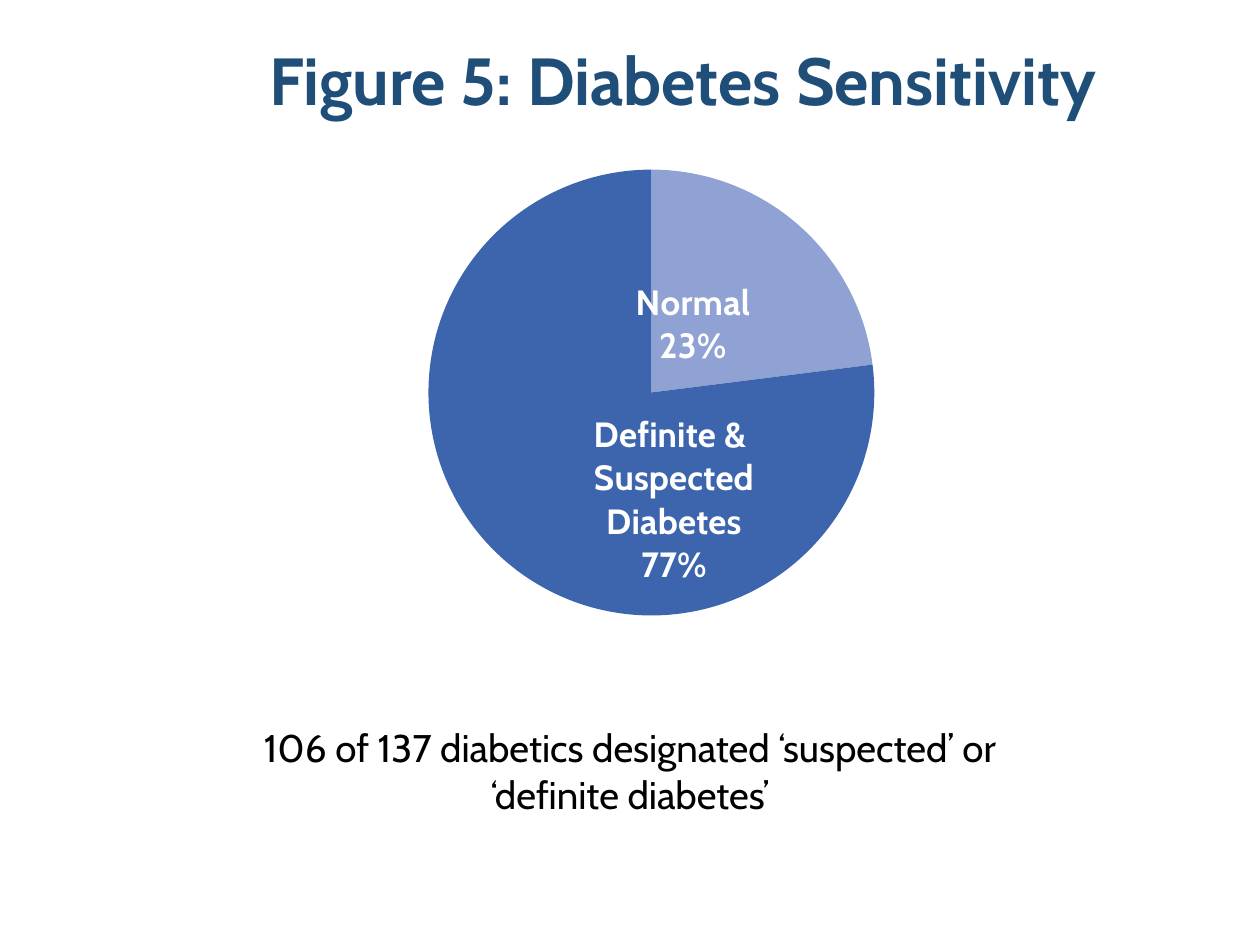
"""Build the diabetes sensitivity pie slide."""
from dataclasses import dataclass

import lxml.etree
import pptx
import pptx.chart.data
import pptx.dml.color
import pptx.enum.chart
import pptx.enum.text
import pptx.oxml
import pptx.oxml.ns
import pptx.util

Inches = pptx.util.Inches
FONT = "Cabin"
COLORS = {"title": "1F4E79", "normal": "90A2D3", "diabetes": "3C65AE",
          "label": "FFFFFF", "text": "000000"}


@dataclass
class Slice:
    """A pie slice with its label lines and label offset."""
    name: str
    value: int
    color: str
    lines: tuple[str, ...]
    dx: float
    dy: float


@dataclass
class Caption:
    """A centred line of text and its box in inches."""
    text: str
    box: tuple[float, float, float, float]
    size: int
    color: str
    bold: bool = False


SLICES = [
    Slice("Normal", 23, "normal", ("Normal", "23%"), -0.03, 0.02),
    Slice("Definite & Suspected Diabetes", 77, "diabetes",
          ("Definite & ", "Suspected Diabetes", "77%"), 0.09, 0.03),
]
CAPTIONS = [
    Caption("Figure 5: Diabetes Sensitivity", (1.67, 0.26, 7.5, 0.74),
            38, "title", True),
    Caption("106 of 137 diabetics designated ‘suspected’ or ‘definite diabetes’",
            (1.71, 5.7, 6.58, 0.84), 22, "text"),
]


def rgb(name: str) -> pptx.dml.color.RGBColor:
    """Return a named colour."""
    return pptx.dml.color.RGBColor.from_string(COLORS[name])


def add_run(p, text: str, size: int, color: str, bold: bool = False) -> None:
    """Add one styled run to a paragraph."""
    r = p.add_run()
    r.text = text
    r.font.name = FONT
    r.font.size = pptx.util.Pt(size)
    r.font.bold = bold
    r.font.color.rgb = rgb(color)


def set_layout(parent, index: int, **values: float | str) -> None:
    """Replace the layout of a chart part."""
    qn = pptx.oxml.ns.qn
    for old in parent.findall(qn("c:layout")):
        parent.remove(old)
    layout = pptx.oxml.parse_xml(f"<c:layout {pptx.oxml.ns.nsdecls('c')}/>")
    manual = lxml.etree.SubElement(layout, qn("c:manualLayout"))
    for key, value in values.items():
        lxml.etree.SubElement(manual, qn(f"c:{key}")).set("val", str(value))
    parent.insert(index, layout)


def style_slice(point, item: Slice) -> None:
    """Colour a slice and write its label."""
    point.format.fill.solid()
    point.format.fill.fore_color.rgb = rgb(item.color)
    point.format.line.fill.background()
    label = point.data_label
    tf = label.text_frame
    for i, line in enumerate(item.lines):
        p = tf.paragraphs[0] if i == 0 else tf.add_paragraph()
        add_run(p, line, 20, "label", True)
    label.position = pptx.enum.chart.XL_LABEL_POSITION.CENTER


def add_pie(s) -> None:
    """Add the pie chart."""
    data = pptx.chart.data.CategoryChartData()
    data.categories = [item.name for item in SLICES]
    data.add_series("Series 1", [item.value for item in SLICES])
    chart = s.shapes.add_chart(
        pptx.enum.chart.XL_CHART_TYPE.PIE, Inches(0.75), Inches(-0.17),
        Inches(8.5), Inches(6.32), data).chart
    chart.has_legend = False
    chart.has_title = False
    chart.font.name = "Arial"
    chart.font.size = pptx.util.Pt(10)
    set_layout(chart._chartSpace.chart.plotArea, 0, layoutTarget="inner",
               xMode="edge", yMode="edge", x=0.31, y=0.24, w=0.42, h=0.56)
    plot = chart.plots[0]
    plot.vary_by_categories = True
    series = plot.series[0]
    for i, item in enumerate(SLICES):
        style_slice(series.points[i], item)
    labels = series.data_labels
    labels.show_percentage = True
    labels.show_category_name = True
    labels.show_value = False
    for item, label in zip(SLICES, labels._element.findall(pptx.oxml.ns.qn("c:dLbl"))):
        set_layout(label, 1, x=item.dx, y=item.dy)


def add_caption(s, caption: Caption) -> None:
    """Add a centred text box."""
    tf = s.shapes.add_textbox(*map(Inches, caption.box)).text_frame
    tf.word_wrap = True
    p = tf.paragraphs[0]
    p.alignment = pptx.enum.text.PP_ALIGN.CENTER
    add_run(p, caption.text, caption.size, caption.color, caption.bold)


def main() -> None:
    """Build and save the slide."""
    prs = pptx.Presentation()
    prs.slide_width, prs.slide_height = Inches(10), Inches(7.5)
    s = prs.slides.add_slide(prs.slide_layouts[6])
    add_pie(s)
    for caption in CAPTIONS:
        add_caption(s, caption)
    prs.save("out.pptx")


if __name__ == "__main__":
    main()
